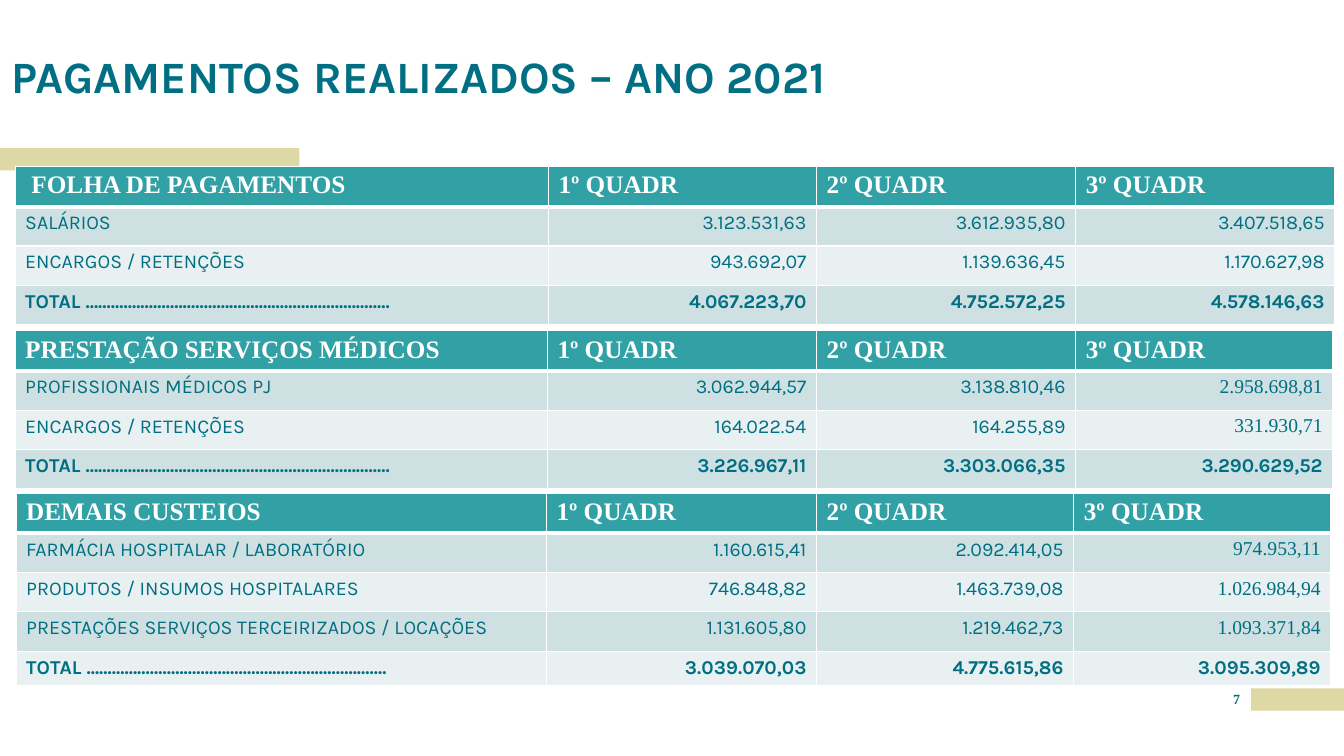
from lxml.etree import SubElement
from pptx import Presentation
from pptx.dml.color import RGBColor
from pptx.enum.shapes import MSO_SHAPE
from pptx.enum.text import MSO_ANCHOR, PP_ALIGN
from pptx.oxml.ns import qn
from pptx.util import Inches, Pt

COLORS = {"teal": "32A1A6", "ink": "006F83", "sand": "DED8A4", "white": "FFFFFF",
          "odd": "CEE0E1", "even": "E8F0F1"}
TITLE_FONT, SERIF = "Karla", "Times New Roman"
QUARTERS = ["1º QUADR", "2º QUADR", "3º QUADR"]
ROW_HEIGHT = 0.39


def write(frame, text, size, font, color, bold, align=PP_ALIGN.LEFT):
    para = frame.paragraphs[0]
    para.alignment = align
    span = para.add_run()
    span.text = text
    for name, value in {"size": Pt(size), "name": font, "bold": bold}.items():
        setattr(span.font, name, value)
    span.font.color.rgb = RGBColor.from_string(COLORS[color])
    return para


def add_borders(cell, top, bottom):
    """Draw white cell edges; top and bottom are widths in points."""
    properties = cell._tc.get_or_add_tcPr()
    edges = {"a:lnL": 1, "a:lnR": 1, "a:lnT": top, "a:lnB": bottom}
    for position, (tag, width) in enumerate(edges.items()):
        line = SubElement(properties, qn(tag), w=str(Pt(width)))
        fill = SubElement(line, qn("a:solidFill"))
        SubElement(fill, qn("a:srgbClr"), val=COLORS["white"])
        properties.insert(position, line)


deck = Presentation()
deck.slide_width, deck.slide_height = Inches(13.33), Inches(7.5)
page = deck.slides.add_slide(deck.slide_layouts[6])

for left, top, width in [(12.41, 6.83, 0.92), (0, 1.47, 2.97)]:
    bar = page.shapes.add_shape(MSO_SHAPE.RECTANGLE, Inches(left), Inches(top),
                                Inches(width), Inches(0.22))
    bar.shadow.inherit = False
    bar.fill.solid()
    bar.fill.fore_color.rgb = RGBColor.from_string(COLORS["sand"])
    bar.line.fill.background()

labels = [
    ((0.11, 0, 9.34, 1.02), MSO_ANCHOR.BOTTOM, 0.9,
     ("PAGAMENTOS REALIZADOS – ANO 2021", 32, TITLE_FONT, "ink", True)),
    ((12.12, 6.85, 0.29, 0.25), MSO_ANCHOR.TOP, 1.0,
     ("7", 10, SERIF, "ink", True, PP_ALIGN.CENTER)),
]
for place, anchor, spacing, content in labels:
    frame = page.shapes.add_textbox(*map(Inches, place)).text_frame
    settings = {"word_wrap": True, "vertical_anchor": anchor, "margin_left": 0,
                "margin_right": 0, "margin_top": 0, "margin_bottom": 0}
    for name, value in settings.items():
        setattr(frame, name, value)
    write(frame, *content).line_spacing = spacing

# Each table: left, top, column widths, last row height, font of the last column, rows
tables = [
    (0.15, 1.65, [5.29, 2.66, 2.57, 2.57], ROW_HEIGHT, TITLE_FONT, [
        [" FOLHA DE PAGAMENTOS", *QUARTERS],
        ["SALÁRIOS", "3.123.531,63", "3.612.935,80", "3.407.518,65"],
        ["ENCARGOS / RETENÇÕES", "943.692,07", "1.139.636,45", "1.170.627,98"],
        ["TOTAL " + "." * 72, "4.067.223,70", "4.752.572,25", "4.578.146,63"],
    ]),
    (0.15, 3.28, [5.28, 2.67, 2.57, 2.55], ROW_HEIGHT, SERIF, [
        ["PRESTAÇÃO SERVIÇOS MÉDICOS", *QUARTERS],
        ["PROFISSIONAIS MÉDICOS PJ", "3.062.944,57", "3.138.810,46", "2.958.698,81"],
        ["ENCARGOS / RETENÇÕES", "164.022.54", "164.255,89", "331.930,71"],
        ["TOTAL " + "." * 72, "3.226.967,11", "3.303.066,35", "3.290.629,52"],
    ]),
    (0.16, 4.89, [5.26, 2.68, 2.55, 2.55], 0.34, SERIF, [
        ["DEMAIS CUSTEIOS", *QUARTERS],
        ["FARMÁCIA HOSPITALAR / LABORATÓRIO", "1.160.615,41", "2.092.414,05", "974.953,11"],
        ["PRODUTOS / INSUMOS HOSPITALARES", "746.848,82", "1.463.739,08", "1.026.984,94"],
        ["PRESTAÇÕES SERVIÇOS TERCEIRIZADOS / LOCAÇÕES",
         "1.131.605,80", "1.219.462,73", "1.093.371,84"],
        ["TOTAL " + "." * 71, "3.039.070,03", "4.775.615,86", "3.095.309,89"],
    ]),
]
for left, top, widths, last_height, last_font, rows in tables:
    heights = [ROW_HEIGHT] * (len(rows) - 1) + [last_height]
    table = page.shapes.add_table(len(rows), len(widths), Inches(left), Inches(top),
                                  Inches(sum(widths)), Inches(sum(heights))).table
    for column, width in zip(table.columns, widths):
        column.width = Inches(width)
    for r, values in enumerate(rows):
        table.rows[r].height = Inches(heights[r])
        header, total = r == 0, r == len(rows) - 1
        shade = "teal" if header else "odd" if r % 2 else "even"
        for c, value in enumerate(values):
            cell = table.cell(r, c)
            cell.fill.solid()
            cell.fill.fore_color.rgb = RGBColor.from_string(COLORS[shade])
            add_borders(cell, top=3 if r == 1 else 1, bottom=3 if header else 1)
            if header:
                write(cell.text_frame, value, 18, SERIF, "white", True)
            else:
                font = last_font if c == 3 and not total else TITLE_FONT
                align = PP_ALIGN.RIGHT if c else PP_ALIGN.LEFT
                write(cell.text_frame, value, 14, font, "ink", total, align)

deck.save("out.pptx")
